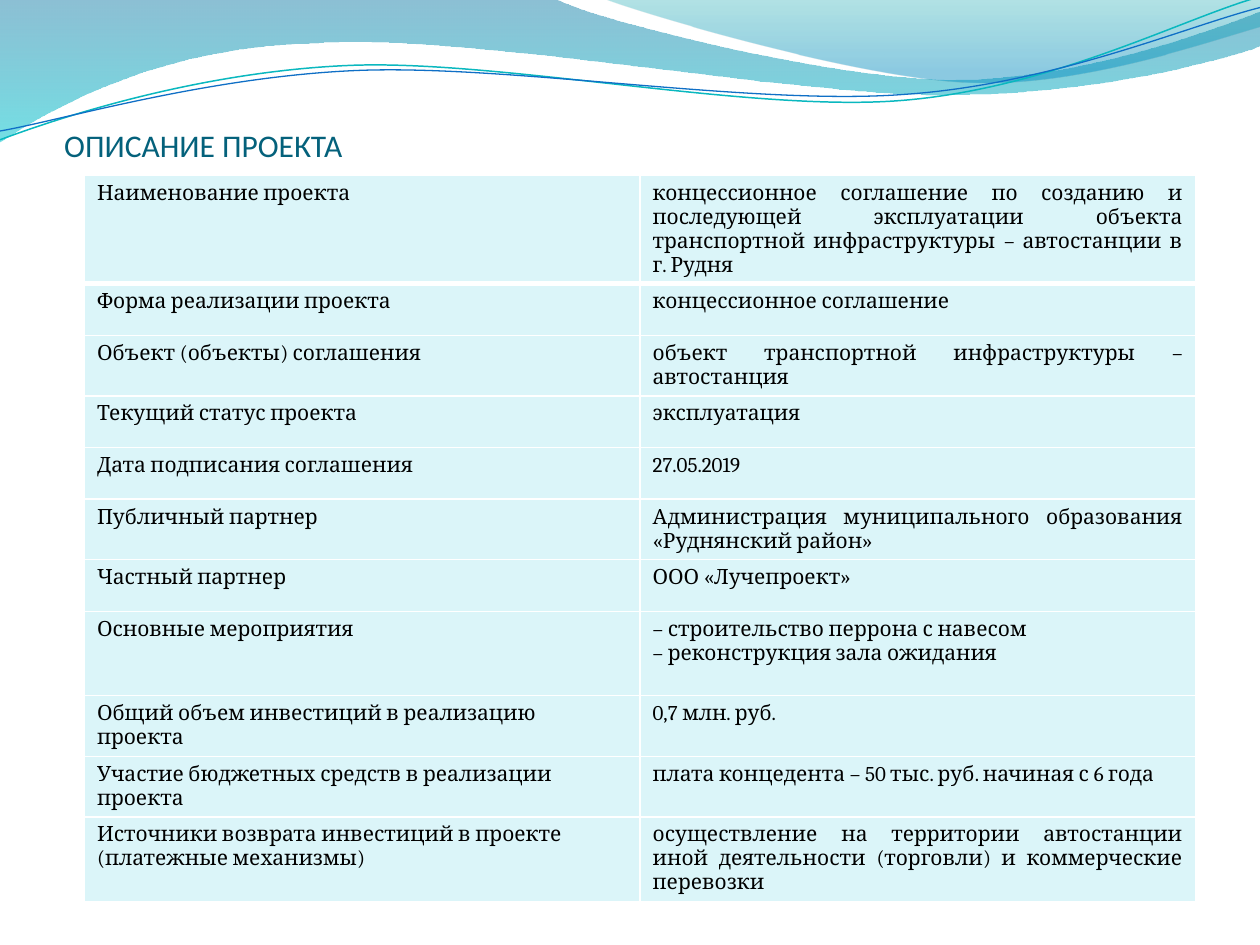
"""Build the project description slide: a wave header, a title and a two-column table."""
from dataclasses import dataclass

from lxml.etree import SubElement
from pptx import Presentation
from pptx.dml.color import RGBColor
from pptx.enum.text import MSO_ANCHOR, PP_ALIGN
from pptx.oxml.ns import qn
from pptx.util import Inches, Pt


@dataclass(frozen=True)
class Theme:
    title_font: str = "Calibri"
    table_font: str = "Cambria"
    title_size: int = 18
    table_size: int = 12
    table_spacing: float = 13.7
    title: str = "04617B"
    text: str = "000000"
    cell: str = "DBF5F9"
    border: str = "FFFFFF"
    left_wave: tuple = ((0, "0074A1", 45), (1, "00C6CF", 55))
    right_wave: tuple = ((0, "00A1A9", 30), (0.8, "008BBF", 45))
    teal_line: str = "0AB8BF"
    blue_line: str = "0F6FC6"


THEME = Theme()


def add_outline(slide, start, segments, close):
    """Draw straight (x, y) and cubic (x1, y1, x2, y2, x, y) segments in inches."""
    builder = slide.shapes.build_freeform(Inches(start[0]), Inches(start[1]))
    for segment in segments:
        vertices = [(Inches(x), Inches(y)) for x, y in zip(segment[::2], segment[1::2])]
        builder.add_line_segments(vertices, close=False)
    if close:
        builder.add_line_segments([], close=True)
    outline = builder.convert_to_shape()
    outline.shadow.inherit = False
    steps = iter(list(outline.element.iter(qn("a:lnTo"))))
    for segment in segments:
        first_step = next(steps)
        if len(segment) == 6:
            first_step.addnext(curve := first_step.makeelement(qn("a:cubicBezTo")))
            for step in (first_step, next(steps), next(steps)):
                curve.append(step[0])
                step.getparent().remove(step)
    return outline


def style_paragraph(paragraph, font_name, size, color):
    paragraph.font.name = font_name
    paragraph.font.size = Pt(size)
    paragraph.font.bold = False
    paragraph.font.color.rgb = RGBColor.from_string(color)


prs = Presentation()
prs.slide_width, prs.slide_height = Inches(10), Inches(7.5)
slide = prs.slides.add_slide(prs.slide_layouts[6])

waves = [
    ((0, 0), [
        (4.4, -0.01),
        (4.76, 0.17, 6.64, 0.63, 7.58, 0.63),
        (8.53, 0.63, 9.58, 0.26, 10, 0.09),
        (10.01, 0.36),
        (9.83, 0.44, 8.7, 0.76, 7.46, 0.75),
        (6.22, 0.75, 3.82, 0.28, 2.57, 0.34),
        (1.29, 0.36, 0.46, 0.83, -0.01, 1.13),
        (0, 0),
    ], THEME.left_wave),
    ((4.79, -0.01), [
        (5.09, 0.11, 6.82, 0.62, 7.69, 0.65),
        (8.56, 0.69, 9.61, 0.32, 10, 0.21),
        (10, 0),
        (4.79, -0.01),
    ], THEME.right_wave),
]
for start, segments, stops in waves:
    wave = add_outline(slide, start, segments, close=True)
    wave.line.fill.background()
    wave.fill.gradient()
    wave.fill.gradient_angle = 270
    for gradient_stop, (position, color, _) in zip(wave.fill.gradient_stops, stops):
        gradient_stop.position = position
        gradient_stop.color.rgb = RGBColor.from_string(color)
    for color_element, (_, _, opacity) in zip(wave.element.spPr.iter(qn("a:srgbClr")), stops):
        SubElement(color_element, qn("a:alpha"), val=str(opacity * 1000))

wave_lines = [
    ((0, 1.11), [
        (0.48, 0.93, 1.58, 0.57, 2.77, 0.52),
        (3.95, 0.47, 5.93, 0.89, 7.13, 0.8),
        (8.33, 0.71, 9.38, 0.15, 9.98, -0.02),
    ], THEME.teal_line, 0.85),
    ((0, 1.04), [
        (0.47, 0.96, 1.64, 0.61, 2.83, 0.56),
        (4.03, 0.51, 5.97, 0.84, 7.17, 0.75),
        (8.36, 0.67, 9.41, 0.21, 10, 0.06),
    ], THEME.blue_line, 0.75),
]
for start, segments, color, width in wave_lines:
    wave_line = add_outline(slide, start, segments, close=False)
    wave_line.fill.background()
    wave_line.line.color.rgb = RGBColor.from_string(color)
    wave_line.line.width = Pt(width)

title = slide.shapes.add_textbox(Inches(0.51), Inches(0.76), Inches(2.77), Inches(0.54)).text_frame
title.word_wrap = True
title.vertical_anchor = MSO_ANCHOR.BOTTOM
title.margin_left = title.margin_right = title.margin_bottom = 0
title.margin_top = Inches(0.05)
title.text = "ОПИСАНИЕ ПРОЕКТА"
style_paragraph(title.paragraphs[0], THEME.title_font, THEME.title_size, THEME.title)

project_facts = [
    ("Наименование проекта",
     "концессионное соглашение по созданию и последующей эксплуатации объекта "
     "транспортной инфраструктуры – автостанции в г. Рудня"),
    ("Форма реализации проекта", "концессионное соглашение"),
    ("Объект (объекты) соглашения", "объект транспортной инфраструктуры – автостанция"),
    ("Текущий статус проекта", "эксплуатация"),
    ("Дата подписания соглашения", "27.05.2019"),
    ("Публичный партнер", "Администрация муниципального образования «Руднянский район»"),
    ("Частный партнер", "ООО «Лучепроект»"),
    ("Основные мероприятия",
     "– строительство перрона с навесом\n– реконструкция зала ожидания"),
    ("Общий объем инвестиций в реализацию проекта", "0,7 млн. руб."),
    ("Участие бюджетных средств в реализации проекта",
     "плата концедента – 50 тыс. руб. начиная с 6 года"),
    ("Источники возврата инвестиций в проекте (платежные механизмы)",
     "осуществление на территории автостанции иной деятельности (торговли) "
     "и коммерческие перевозки"),
]
row_height, activities_height = Inches(0.41), Inches(0.67)
facts_table = slide.shapes.add_table(
    len(project_facts), 2, Inches(0.67), Inches(1.39), Inches(8.82), Inches(5.24)
).table
facts_table.horz_banding = False

for row_index, fact in enumerate(project_facts):
    is_list = "\n" in fact[1]
    facts_table.rows[row_index].height = activities_height if is_list else row_height
    border_widths = {
        "a:lnL": 1,
        "a:lnR": 1,
        "a:lnT": 3 if row_index == 1 else 1,
        "a:lnB": 3 if row_index == 0 else 1,
    }
    for column_index, wording in enumerate(fact):
        cell = facts_table.cell(row_index, column_index)
        cell.text = wording
        for paragraph in cell.text_frame.paragraphs:
            style_paragraph(paragraph, THEME.table_font, THEME.table_size, THEME.text)
            paragraph.line_spacing = Pt(THEME.table_spacing)
            if column_index == 1 and not is_list:
                paragraph.alignment = PP_ALIGN.JUSTIFY
        cell_properties = cell._tc.get_or_add_tcPr()
        for side, width in border_widths.items():
            border = SubElement(cell_properties, qn(side), w=str(Pt(width)))
            border_fill = SubElement(border, qn("a:solidFill"))
            SubElement(border_fill, qn("a:srgbClr"), val=THEME.border)
        cell.fill.solid()
        cell.fill.fore_color.rgb = RGBColor.from_string(THEME.cell)

prs.save("out.pptx")
